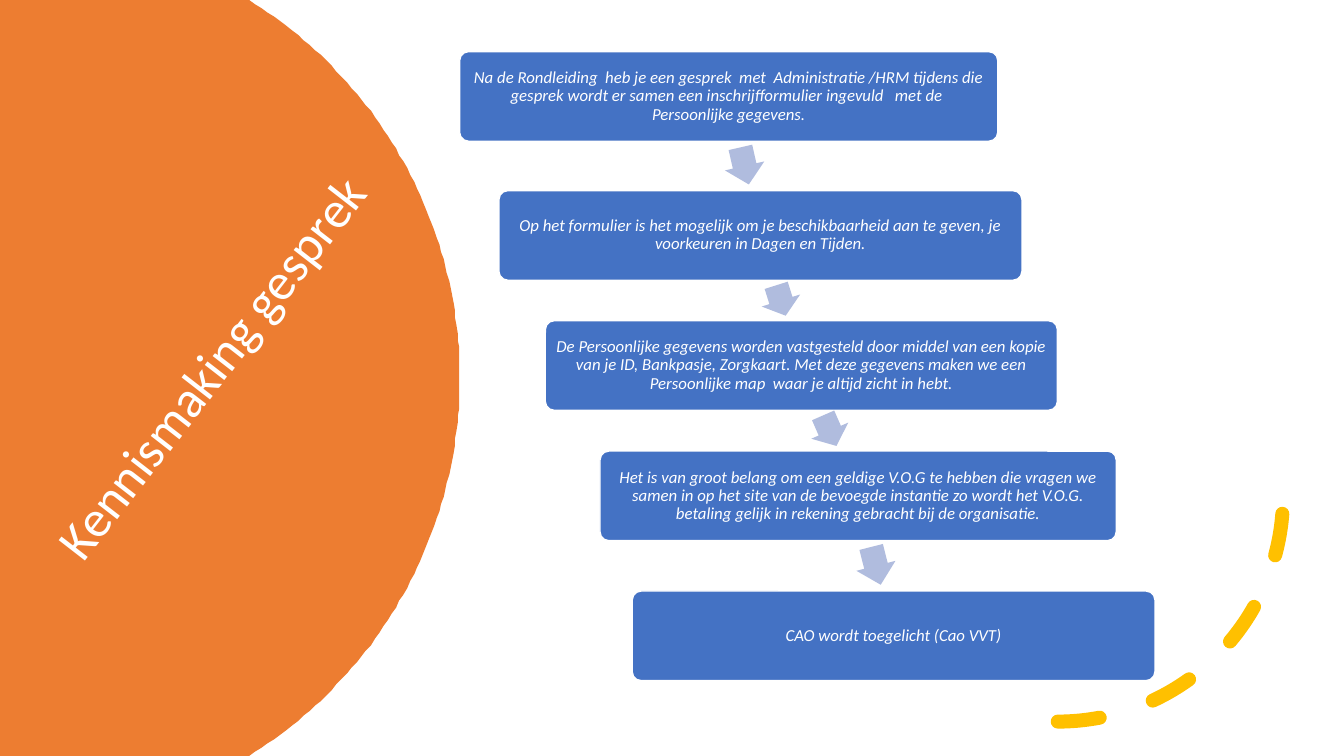
from dataclasses import dataclass
from itertools import pairwise
from math import asin, atan2, cos, degrees, sin

from pptx import Presentation
from pptx.dml.color import RGBColor
from pptx.enum.dml import MSO_LINE
from pptx.enum.shapes import MSO_SHAPE
from pptx.enum.text import MSO_ANCHOR, PP_ALIGN
from pptx.util import Pt


@dataclass(frozen=True)
class Theme:
    font: str = "Calibri"
    white: str = "FFFFFF"
    orange: str = "ED7D31"
    blue: str = "4472C4"
    arrow: str = "B0BCDE"
    yellow: str = "FFC000"
    title_size: float = 37
    body_size: float = 12


THEME = Theme()
WIDTH, HEIGHT = 960, 540
STEP_HEIGHT = 64
STEPS = [
    (328.3, 36.9, 384.4,
     "Na de Rondleiding  heb je een gesprek  met  Administratie /HRM tijdens die gesprek "
     "wordt er samen een inschrijfformulier ingevuld   met de  Persoonlijke gegevens."),
    (356.4, 136.2, 373.6,
     "Op het formulier is het mogelijk om je beschikbaarheid aan te geven, je voorkeuren "
     "in Dagen en Tijden."),
    (389.5, 229.1, 365.8,
     "De Persoonlijke gegevens worden vastgesteld door middel van een kopie van je ID, "
     "Bankpasje, Zorgkaart. Met deze gegevens maken we een Persoonlijke map  waar je "
     "altijd zicht in hebt."),
    (428.6, 322.2, 368.8,
     "Het is van groot belang om een geldige V.O.G te hebben die vragen we samen in op het "
     "site van de bevoegde instantie zo wordt het V.O.G. betaling gelijk in rekening "
     "gebracht bij de organisatie."),
    (451.6, 422.2, 373.4, "CAO wordt toegelicht (Cao VVT)"),
]


def rgb(value):
    return RGBColor.from_string(value)


def paint(s, fill=None, line=None, weight=1):
    s.shadow.inherit = False
    if fill:
        s.fill.solid()
        s.fill.fore_color.rgb = rgb(fill)
    else:
        s.fill.background()
    if line:
        s.line.color.rgb = rgb(line)
        s.line.width = Pt(weight)
    else:
        s.line.fill.background()


def add_shape(slide, kind, x, y, w, h, **style):
    s = slide.shapes.add_shape(kind, Pt(x), Pt(y), Pt(w), Pt(h))
    paint(s, **style)
    return s


def write(s, text, size, align=PP_ALIGN.LEFT, italic=False, inset=(7.2, 3.6, 7.2, 3.6)):
    tf = s.text_frame
    tf.word_wrap = True
    tf.vertical_anchor = MSO_ANCHOR.MIDDLE
    tf.margin_left, tf.margin_top, tf.margin_right, tf.margin_bottom = map(Pt, inset)
    p = tf.paragraphs[0]
    p.alignment = align
    p.line_spacing = 0.9
    r = p.add_run()
    r.text = text
    r.font.name = THEME.font
    r.font.size = Pt(size)
    r.font.italic = italic
    r.font.color.rgb = rgb(THEME.white)


def add_disc(slide, cx=10.8, radius=317.5, segments=120):
    cy = HEIGHT / 2
    half = asin(cy / radius)
    angles = [half * (2 * i / segments - 1) for i in range(segments + 1)]
    rim = [(cx + radius * cos(a), cy + radius * sin(a)) for a in angles]
    builder = slide.shapes.build_freeform(0, 0, scale=Pt(1))
    builder.add_line_segments(rim + [(0, HEIGHT)], close=True)
    paint(builder.convert_to_shape(), fill=THEME.orange)


def add_title(slide, text):
    s = slide.shapes.add_textbox(Pt(-37.4), Pt(72.7), Pt(402.5), Pt(351.4))
    s.rotation = 307.8
    write(s, text, THEME.title_size, inset=(15.6, 3.6, 7.2, 3.6))


def add_dashed_arc(slide, x, y, size):
    s = add_shape(slide, MSO_SHAPE.ARC, x, y, size, size, line=THEME.yellow, weight=10)
    s.line.dash_style = MSO_LINE.DASH
    s.line._get_or_add_ln().set("cap", "rnd")
    s._element.spPr.xfrm.set("flipV", "1")


def add_step(slide, x, y, w, text):
    s = add_shape(slide, MSO_SHAPE.ROUNDED_RECTANGLE, x, y, w, STEP_HEIGHT,
                  fill=THEME.blue, line=THEME.white)
    s.adjustments[0] = 0.1
    write(s, text, THEME.body_size, PP_ALIGN.CENTER, italic=True, inset=(5.4,) * 4)


def add_step_arrow(slide, upper, lower, thickness=28.8):
    (x1, y1, w1, _), (x2, y2, w2, _) = upper, lower
    start, end = x1 + w1 / 2, x2 + w2 / 2
    angle = atan2(y2 - y1, end - start)
    length = 0.75 * (y2 - y1 - STEP_HEIGHT) / sin(angle)
    cx, cy = (start + end) / 2, (y1 + y2 + STEP_HEIGHT) / 2
    s = add_shape(slide, MSO_SHAPE.RIGHT_ARROW, cx - length / 2, cy - thickness / 2,
                  length, thickness, fill=THEME.arrow)
    s.adjustments[0] = 0.6
    s.adjustments[1] = 0.5
    s.rotation = degrees(angle)


def main():
    prs = Presentation()
    prs.slide_width, prs.slide_height = Pt(WIDTH), Pt(HEIGHT)
    slide = prs.slides.add_slide(prs.slide_layouts[6])
    add_disc(slide)
    add_title(slide, "Kennismaking gesprek")
    add_dashed_arc(slide, 594.7, 193.7, 321.8)
    for step in STEPS:
        add_step(slide, *step)
    for upper, lower in pairwise(STEPS):
        add_step_arrow(slide, upper, lower)
    prs.save("out.pptx")


if __name__ == "__main__":
    main()
